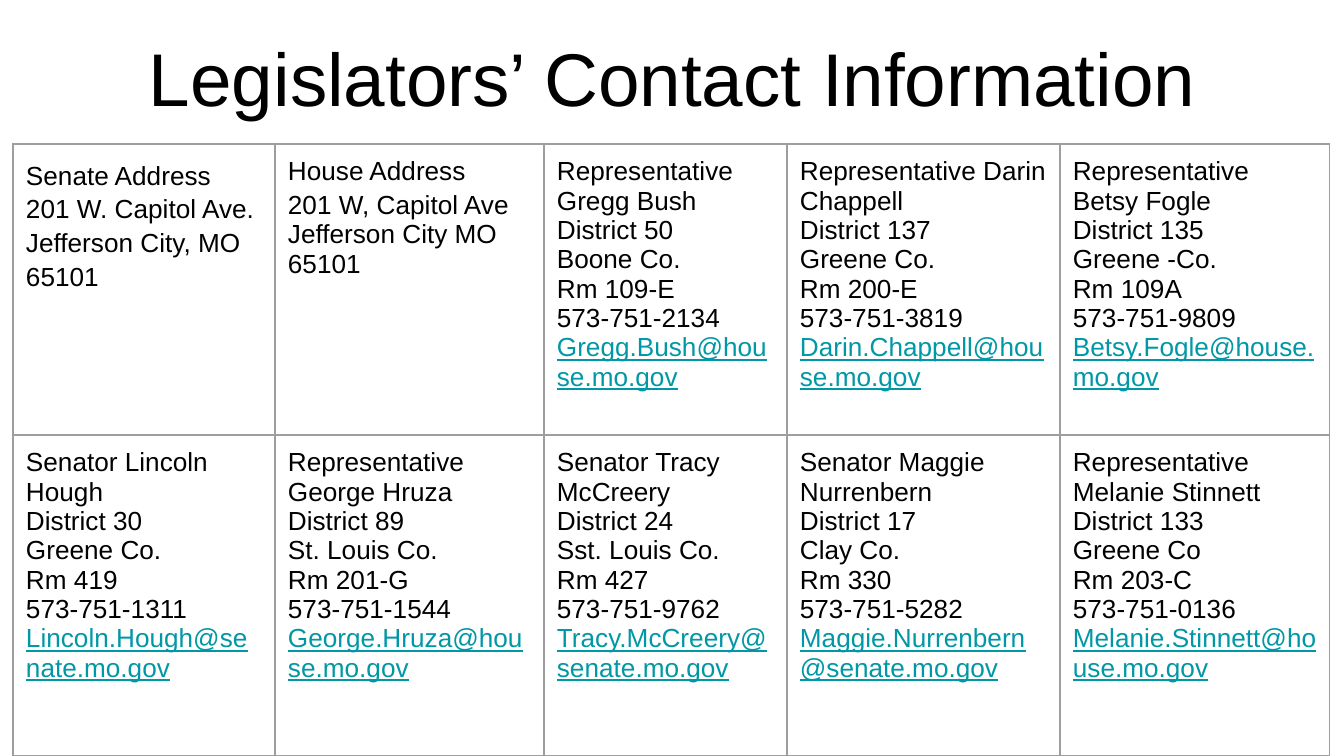
from pptx import Presentation
from pptx.dml.color import RGBColor
from pptx.enum.text import MSO_ANCHOR, MSO_AUTO_SIZE, PP_ALIGN
from pptx.oxml import parse_xml
from pptx.oxml.ns import nsdecls
from pptx.util import Pt

CENTER = PP_ALIGN.CENTER
BOTTOM = MSO_ANCHOR.BOTTOM
TOP = MSO_ANCHOR.TOP
NO_FIT = MSO_AUTO_SIZE.NONE

TITLE = "Legislators’ Contact Information"
ROWS = [
    [
        ["Senate Address", "201 W. Capitol Ave.", "Jefferson City, MO", "65101"],
        ["House Address", "201 W, Capitol Ave", "Jefferson City MO 65101"],
        ["Representative Gregg Bush", "District 50", "Boone Co.", "Rm 109-E",
         "573-751-2134", "Gregg.Bush@house.mo.gov"],
        ["Representative Darin Chappell", "District 137", "Greene Co.", "Rm 200-E",
         "573-751-3819", "Darin.Chappell@house.mo.gov"],
        ["Representative", "Betsy Fogle", "District 135", "Greene -Co.", "Rm 109A",
         "573-751-9809", "Betsy.Fogle@house.mo.gov"],
    ],
    [
        ["Senator Lincoln Hough", "District 30", "Greene Co.", "Rm 419",
         "573-751-1311", "Lincoln.Hough@senate.mo.gov"],
        ["Representative", "George Hruza", "District 89", "St. Louis Co.", "Rm 201-G",
         "573-751-1544", "George.Hruza@house.mo.gov"],
        ["Senator Tracy McCreery", "District 24", "Sst. Louis Co.", "Rm 427",
         "573-751-9762", "Tracy.McCreery@senate.mo.gov"],
        ["Senator Maggie Nurrenbern", "District 17", "Clay Co.", "Rm 330",
         "573-751-5282", "Maggie.Nurrenbern@senate.mo.gov"],
        ["Representative", "Melanie Stinnett", "District 133", "Greene Co", "Rm 203-C",
         "573-751-0136", "Melanie.Stinnett@house.mo.gov"],
    ],
]
LOOSE = {(0, 0): {0, 1, 2, 3}, (0, 1): {1}}
WIDTHS = [262, 269, 243, 273, 270]
HEIGHTS = [291, 321]
THEME = {"font": "Arial", "ink": "000000", "mail": "0097A7", "rule": "9E9E9E",
         "title": 40, "text": 14, "line": 0.75, "loose": 1.15}


def px(n):
    return round(n * 914400 / 134.4)


def style(para, size, ink):
    para.font.name = THEME["font"]
    para.font.size = Pt(size)
    para.font.color.rgb = RGBColor.from_string(ink)


def pad(box):
    box.margin_left = box.margin_right = px(13)
    box.margin_top = box.margin_bottom = px(13)


def edge(cell):
    props = cell._tc.get_or_add_tcPr()
    for spot, side in enumerate("LRTB"):
        props.insert(spot, parse_xml(
            f'<a:ln{side} {nsdecls("a")} w="{Pt(THEME["line"])}"><a:solidFill>'
            f'<a:srgbClr val="{THEME["rule"]}"/></a:solidFill></a:ln{side}>'))


def fill(cell, lines, loose):
    pad(cell)
    cell.vertical_anchor = TOP
    cell.fill.background()
    edge(cell)
    frame = cell.text_frame
    frame.text = "\n".join(lines)
    for n, para in enumerate(frame.paragraphs):
        mail = "@" in lines[n]
        style(para, THEME["text"], THEME["mail" if mail else "ink"])
        para.font.underline = mail
        para.line_spacing = THEME["loose"] if n in loose else 1.0


def main():
    deck = Presentation()
    deck.slide_width, deck.slide_height = px(1344), px(756)
    slide = deck.slides.add_slide(deck.slide_layouts[5])

    title = slide.shapes.title
    title.left, title.top, title.width, title.height = map(px, (19, 21, 1306, 113))
    frame = title.text_frame
    frame.text = TITLE
    frame.auto_size = NO_FIT
    frame.vertical_anchor = BOTTOM
    pad(frame)
    head = frame.paragraphs[0]
    head.alignment = CENTER
    style(head, THEME["title"], THEME["ink"])

    grid = slide.shapes.add_table(
        len(HEIGHTS), len(WIDTHS), px(13), px(144),
        px(sum(WIDTHS)), px(sum(HEIGHTS))).table
    grid.first_row = grid.horz_banding = False
    for col, wide in zip(grid.columns, WIDTHS):
        col.width = px(wide)
    for row, high in zip(grid.rows, HEIGHTS):
        row.height = px(high)
    for r, row in enumerate(ROWS):
        for c, lines in enumerate(row):
            fill(grid.cell(r, c), lines, LOOSE.get((r, c), set()))

    deck.save("out.pptx")


if __name__ == "__main__":
    main()
